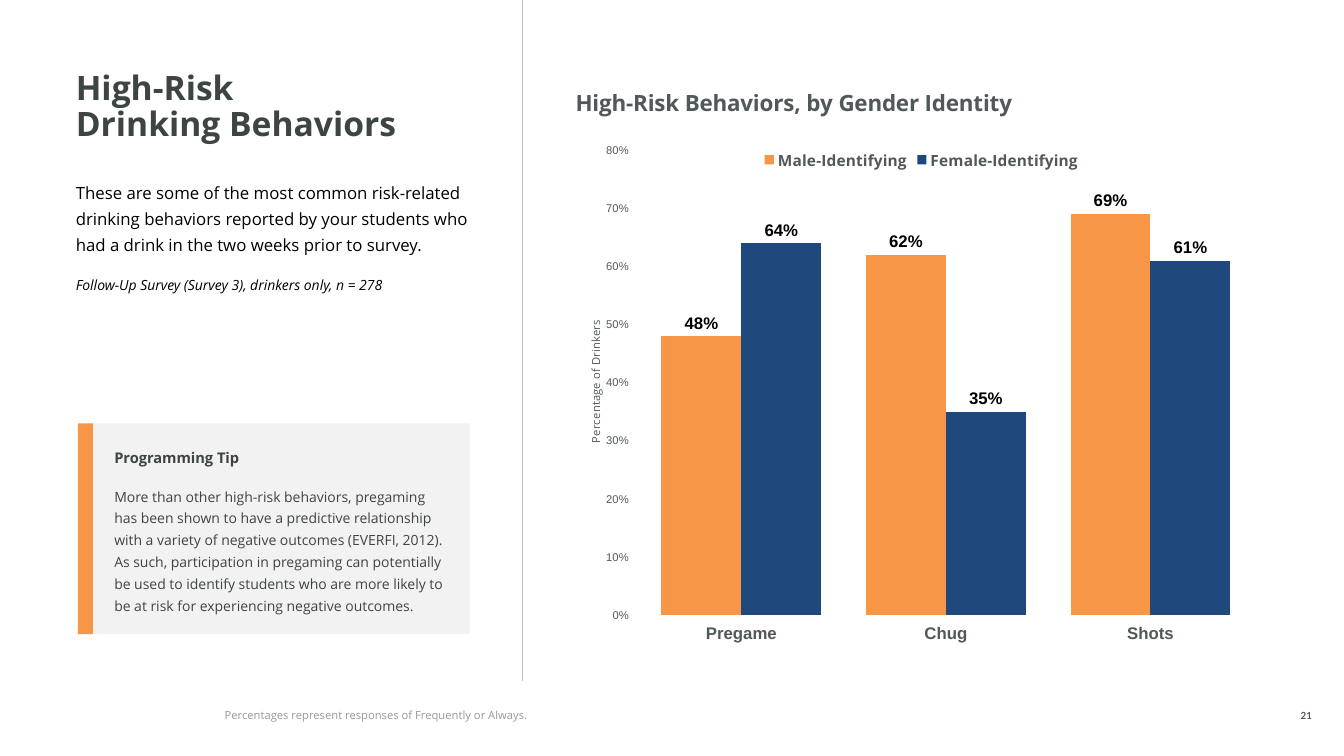
"""Build the slide on high-risk drinking behaviors by gender identity."""
from dataclasses import dataclass, field
from typing import Any

import pptx
import pptx.chart.data
import pptx.dml.color
import pptx.enum.chart
import pptx.enum.shapes
import pptx.enum.text
import pptx.oxml
import pptx.oxml.ns
import pptx.util

Cm = pptx.util.Cm
Pt = pptx.util.Pt
ANCHOR = pptx.enum.text.MSO_ANCHOR
ALIGN = pptx.enum.text.PP_ALIGN
RECT = pptx.enum.shapes.MSO_SHAPE.RECTANGLE
SANS = "Open Sans"
SLATE, INK, BLACK = "515859", "3D4543", "000000"
ORANGE, NAVY = "F79646", "1F497D"


@dataclass
class Line:
    text: str
    size: float
    tint: str
    face: str = SANS
    look: dict[str, Any] = field(default_factory=dict)
    form: dict[str, Any] = field(default_factory=dict)


@dataclass
class Box:
    left: float
    top: float
    width: float
    height: float
    lines: list[Line]
    anchor: Any = ANCHOR.TOP
    inset: float = 0

    def frame(self) -> list[int]:
        return [Cm(n) for n in (self.left, self.top, self.width, self.height)]


@dataclass
class Series:
    name: str
    tint: str
    values: list[float]


def apply(target: Any, values: dict[str, Any]) -> None:
    for key, value in values.items():
        setattr(target, key, value)


def color(code: str) -> pptx.dml.color.RGBColor:
    return pptx.dml.color.RGBColor.from_string(code)


def fill(target: Any, code: str) -> None:
    target.fill.solid()
    target.fill.fore_color.rgb = color(code)


def style(font: Any, size: float, tint: str, face: str, **look: Any) -> None:
    apply(font, {"size": Pt(size), "name": face, **look})
    font.color.rgb = color(tint)


def write(frame: Any, box: Box) -> None:
    apply(frame, {
        "word_wrap": True, "auto_size": pptx.enum.text.MSO_AUTO_SIZE.NONE,
        "vertical_anchor": box.anchor, "margin_top": 0, "margin_bottom": 0,
        "margin_left": Cm(box.inset), "margin_right": Cm(box.inset)})
    for spot, line in enumerate(box.lines):
        para = frame.add_paragraph() if spot else frame.paragraphs[0]
        para.text = line.text
        apply(para, {"alignment": ALIGN.LEFT, "space_before": Pt(0), **line.form})
        for run in para.runs:
            style(run.font, line.size, line.tint, line.face, **line.look)


def block(shapes: Any, box: Box, tint: str) -> None:
    shape = shapes.add_shape(RECT, *box.frame())
    shape.shadow.inherit = False
    fill(shape, tint)
    shape.line.fill.background()
    write(shape.text_frame, box)


def place(node: Any, **spots: float) -> None:
    for old in node.xpath("c:layout"):
        node.remove(old)
    inner = '<c:layoutTarget val="inner"/>' if "w" in spots else ""
    modes = "".join(f'<c:{key}Mode val="edge"/>' for key in spots if key in "xy")
    sizes = "".join(f'<c:{key} val="{value}"/>' for key, value in spots.items())
    layout = pptx.oxml.parse_xml(
        f'<c:layout {pptx.oxml.ns.nsdecls("c")}><c:manualLayout>'
        f"{inner}{modes}{sizes}</c:manualLayout></c:layout>")
    later = node.xpath("c:overlay")
    node.insert(node.index(later[0]) if later else 0, layout)


def label(frame: Any, text: str, size: float, bold: bool) -> None:
    frame.text = text
    style(frame.paragraphs[0].runs[0].font, size, SLATE, SANS, bold=bold)


def plot(shapes: Any, box: Box, cats: list[str], rows: list[Series]) -> None:
    kinds = pptx.enum.chart
    data = pptx.chart.data.CategoryChartData(number_format="0%")
    data.categories = cats
    for row in rows:
        data.add_series(row.name, row.values)
    chart = shapes.add_chart(
        kinds.XL_CHART_TYPE.COLUMN_CLUSTERED, *box.frame(), data).chart
    style(chart.font, 8, SLATE, "Lato")

    chart.has_title = True
    label(chart.chart_title.text_frame,
          "High-Risk Behaviors, by Gender Identity", 16, True)
    chart.has_legend = True
    apply(chart.legend, {"position": kinds.XL_LEGEND_POSITION.TOP,
                         "include_in_layout": False})
    style(chart.legend.font, 11, SLATE, SANS, bold=True)

    across, up = chart.category_axis, chart.value_axis
    apply(up, {"minimum_scale": 0, "maximum_scale": 0.8, "major_unit": 0.1,
               "has_major_gridlines": False})
    apply(up.tick_labels, {"number_format": "0%", "number_format_is_linked": False})
    label(up.axis_title.text_frame, "Percentage of Drinkers", 8, False)
    for axis, size, bold in ((across, 12, True), (up, 8, False)):
        axis.format.line.fill.background()
        style(axis.tick_labels.font, size, SLATE, "Arial", bold=bold)

    bars = chart.plots[0]
    apply(bars, {"gap_width": 56, "overlap": 0, "vary_by_categories": False})
    for row, bar in zip(rows, bars.series):
        fill(bar.format, row.tint)
        tags = bar.data_labels
        apply(tags, {"show_value": True, "number_format": "0%",
                     "number_format_is_linked": False,
                     "position": kinds.XL_LABEL_POSITION.OUTSIDE_END})
        style(tags.font, 12, BLACK, "Arial", bold=True)

    root = chart.element
    for turn in root.xpath("//c:valAx/c:title//a:bodyPr"):
        turn.set("rot", "-5400000")
        turn.set("vert", "horz")
    place(root.xpath("//c:plotArea")[0], x=0.097, y=0.123, w=0.881, h=0.769)
    place(root.xpath("//c:chart/c:title")[0], x=0.0, y=0.01)
    place(root.xpath("//c:legend")[0], x=0.27, y=0.115)
    place(root.xpath("//c:valAx/c:title")[0], x=0.018, y=0.4)


def rule(shapes: Any, left: float, height: float) -> None:
    line = shapes.add_connector(
        pptx.enum.shapes.MSO_CONNECTOR.STRAIGHT, Cm(left), 0, Cm(left), Cm(height))
    line.line.width = Pt(1)
    line.line.color.rgb = color("C1C1C0")
    line.element.spPr.append(
        pptx.oxml.parse_xml(f'<a:effectLst {pptx.oxml.ns.nsdecls("a")}/>'))


LOOSE = {"line_spacing": 1.3}
NEXT = {"line_spacing": 1.3, "space_before": Pt(12)}
BOLD = {"bold": True}

TITLE = Box(1.91, 1.8, 10.01, 1.78, [
    Line("High-Risk\vDrinking Behaviors", 24, INK, look=BOLD,
         form={"line_spacing": 0.9})])
TEXTS = [
    Box(1.91, 4.45, 10.01, 4.6, [
        Line("These are some of the most common risk-related drinking behaviors "
             "reported by your students who had a drink in the two weeks prior "
             "to survey.", 12, BLACK, form=LOOSE),
        Line("Follow-Up Survey (Survey 3), drinkers only, n = 278", 10, BLACK,
             look={"italic": True}, form=NEXT)]),
    Box(5.66, 17.81, 11.28, 0.38, [
        Line("Percentages represent responses of Frequently or Always.", 8,
             "939B9D")], ANCHOR.BOTTOM),
    Box(32.26, 17.81, 1.3, 0.38, [
        Line("21", 7, SLATE, "Lato", BOLD, {"alignment": ALIGN.CENTER})],
        ANCHOR.BOTTOM)]
TIP = Box(2.24, 10.67, 9.6, 5.31, [
    Line("Programming Tip", 10.5, INK, look=BOLD, form=LOOSE),
    Line("More than other high-risk behaviors, pregaming has been shown to have "
         "a predictive relationship with a variety of negative outcomes (EVERFI, "
         "2012). As such, participation in pregaming can potentially be used to "
         "identify students who are more likely to be at risk for experiencing "
         "negative outcomes.", 10, INK, form=NEXT)], ANCHOR.MIDDLE, 0.64)
STRIPE = Box(1.96, TIP.top, 0.38, TIP.height, [])
CHART = Box(14.4, 1.91, 17.55, 15.24, [])
ROWS = [Series("Male-Identifying", ORANGE, [0.48, 0.62, 0.69]),
        Series("Female-Identifying", NAVY, [0.64, 0.35, 0.61])]


def main() -> None:
    deck = pptx.Presentation()
    apply(deck, {"slide_width": Cm(33.86), "slide_height": Cm(19.05)})
    slide = deck.slides.add_slide(deck.slide_layouts.get_by_name("Title Only"))
    shapes = slide.shapes
    head = shapes.title
    apply(head, dict(zip(("left", "top", "width", "height"), TITLE.frame())))
    write(head.text_frame, TITLE)
    rule(shapes, 13.16, 17.15)
    plot(shapes, CHART, ["Pregame", "Chug", "Shots"], ROWS)
    for box in TEXTS:
        write(shapes.add_textbox(*box.frame()).text_frame, box)
    group = shapes.add_group_shape().shapes
    block(group, TIP, "F2F2F2")
    block(group, STRIPE, ORANGE)
    deck.save("out.pptx")


if __name__ == "__main__":
    main()
